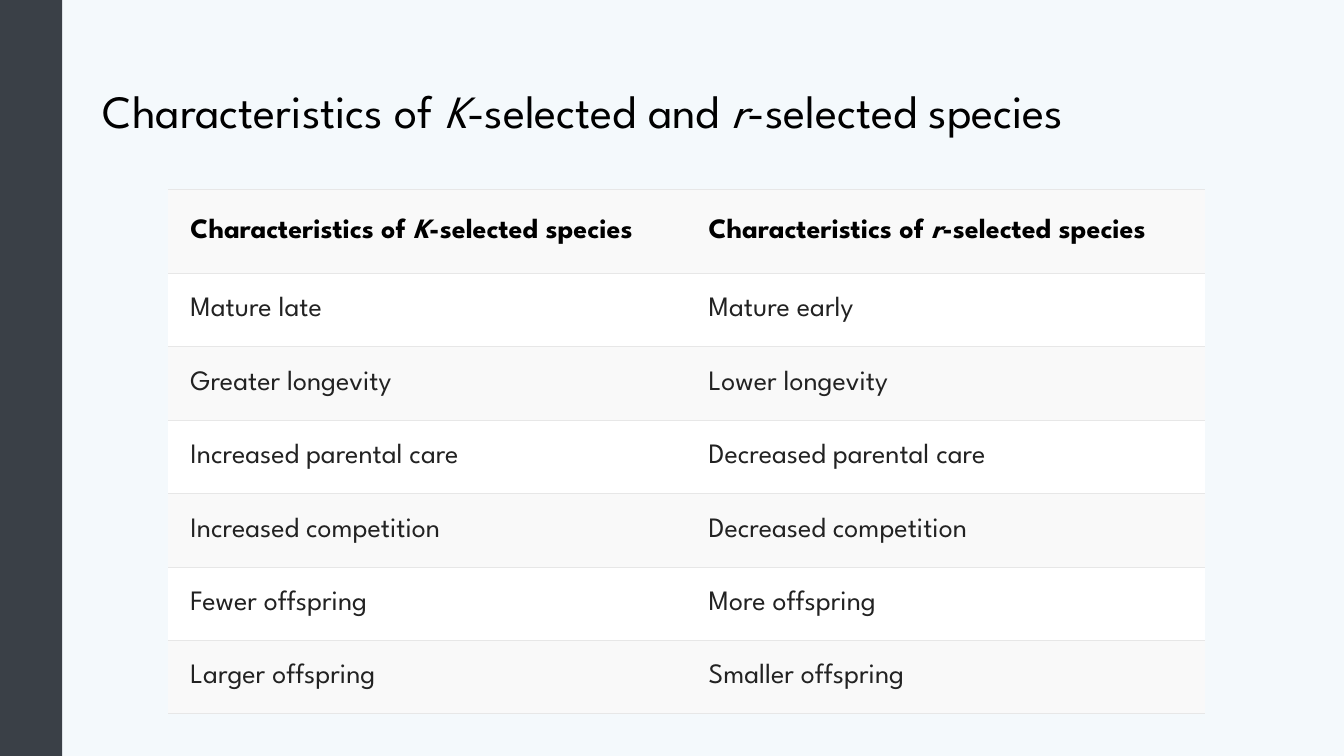
from lxml.etree import SubElement
from pptx import Presentation
from pptx.dml.color import RGBColor
from pptx.enum.shapes import MSO_SHAPE
from pptx.enum.text import MSO_ANCHOR, MSO_AUTO_SIZE, PP_ALIGN
from pptx.oxml.ns import qn
from pptx.util import Cm, Pt

TITLE = "Characteristics of *K*-selected and *r*-selected species"
ROWS = [
    ("Characteristics of *K*-selected species", "Characteristics of *r*-selected species"),
    ("Mature late", "Mature early"),
    ("Greater longevity", "Lower longevity"),
    ("Increased parental care", "Decreased parental care"),
    ("Increased competition", "Decreased competition"),
    ("Fewer offspring", "More offspring"),
    ("Larger offspring", "Smaller offspring"),
]
FONT = "League Spartan"
BANDS = ["F9F9F9", "FFFFFF"]
PLAIN = "{2D5ABB26-0587-4C30-8999-92F81FD0307C}"
HEAD, ROW, COL = 2.11, 1.85, 13.06


def paint(fill, color):
    fill.solid()
    fill.fore_color.rgb = RGBColor.from_string(color)


def write(frame, text, size=20, color="222222", bold=False, space=None):
    par = frame.paragraphs[0]
    par.alignment = PP_ALIGN.LEFT
    par.line_spacing = space
    for n, part in enumerate(text.split("*")):
        run = par.add_run()
        run.text = part
        font = run.font
        font.name, font.size, font.bold = FONT, Pt(size), bold
        font.italic = n % 2 == 1
        font.color.rgb = RGBColor.from_string(color)


def rule(cell, color="E7E7E7"):
    props = cell._tc.get_or_add_tcPr()
    for side in ("a:lnT", "a:lnB"):
        line = SubElement(props, qn(side), w=str(Pt(0.75)))
        fill = SubElement(line, qn("a:solidFill"))
        SubElement(fill, qn("a:srgbClr"), val=color)


def main():
    deck = Presentation()
    deck.slide_width, deck.slide_height = Cm(33.87), Cm(19.05)
    slide = deck.slides.add_slide(deck.slide_layouts[5])
    paint(slide.background.fill, "F4F9FC")

    bar = slide.shapes.add_shape(MSO_SHAPE.RECTANGLE, 0, 0, Cm(1.57), deck.slide_height)
    bar.shadow.inherit = False
    paint(bar.fill, "3A4047")
    bar.line.fill.background()

    title = slide.shapes.title
    title.left, title.top, title.width, title.height = Cm(2.34), Cm(1.02), Cm(29.21), Cm(3.68)
    frame = title.text_frame
    frame.auto_size = MSO_AUTO_SIZE.NONE
    frame.vertical_anchor = MSO_ANCHOR.MIDDLE
    write(frame, TITLE, size=33, color="000000", space=0.9)

    high = HEAD + ROW * (len(ROWS) - 1)
    holder = slide.shapes.add_table(len(ROWS), 2, Cm(4.24), Cm(4.78), Cm(2 * COL), Cm(high))
    table = holder.table
    table._tbl.tblPr.find(qn("a:tableStyleId")).text = PLAIN
    table.horz_banding = False
    for col in table.columns:
        col.width = Cm(COL)
    for r, texts in enumerate(ROWS):
        top = r == 0
        table.rows[r].height = Cm(HEAD if top else ROW)
        for c, text in enumerate(texts):
            cell = table.cell(r, c)
            rule(cell)
            paint(cell.fill, BANDS[r % 2])
            cell.vertical_anchor = MSO_ANCHOR.MIDDLE
            cell.margin_left = cell.margin_right = Cm(0.56)
            cell.margin_top = cell.margin_bottom = Cm(0.2 if top else 0.13)
            write(cell.text_frame, text, color="000000" if top else "222222", bold=top)

    deck.save("out.pptx")


if __name__ == "__main__":
    main()
